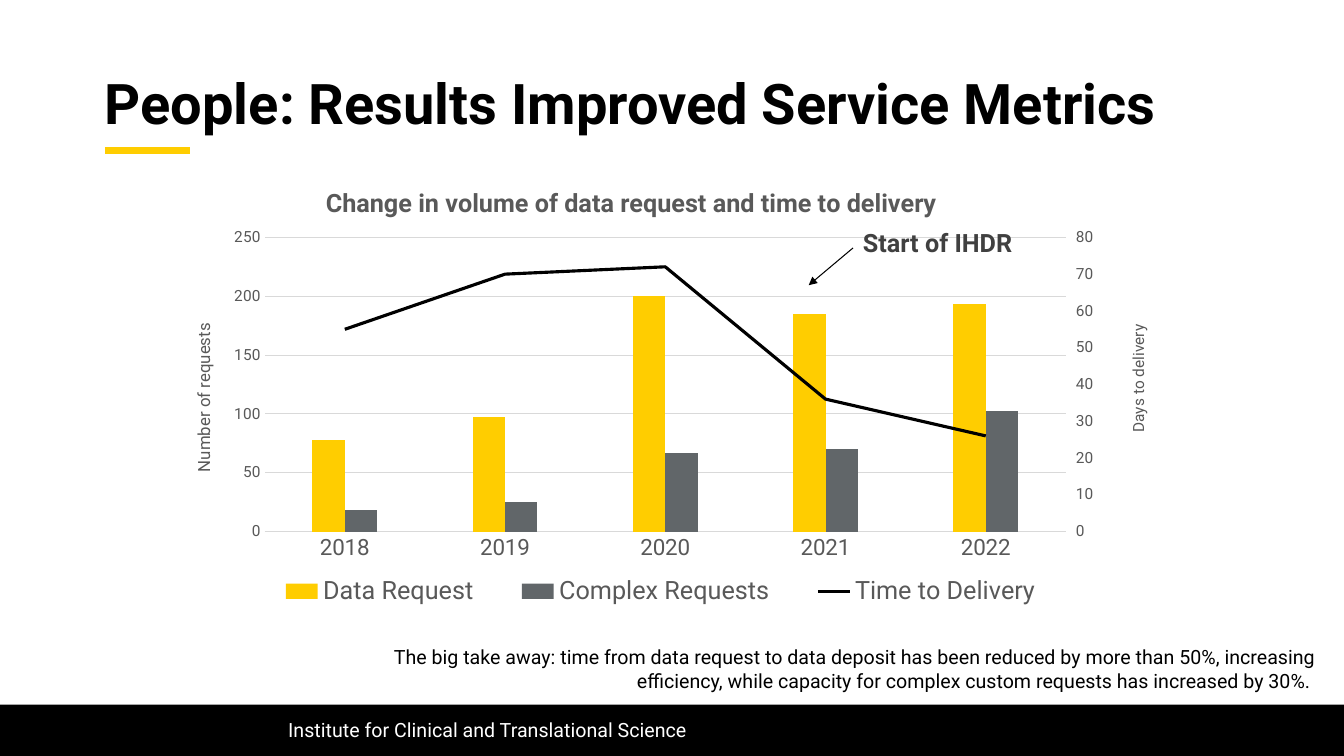
from dataclasses import dataclass

from lxml import etree
from pptx import Presentation
from pptx.chart.chart import Chart
from pptx.chart.data import CategoryChartData
from pptx.dml.color import RGBColor
from pptx.enum.chart import XL_CHART_TYPE, XL_LEGEND_POSITION, XL_MARKER_STYLE, XL_TICK_MARK
from pptx.enum.shapes import MSO_CONNECTOR, MSO_SHAPE
from pptx.enum.text import MSO_ANCHOR, PP_ALIGN
from pptx.oxml import parse_xml
from pptx.oxml.ns import nsdecls, qn
from pptx.shapes.base import BaseShape
from pptx.slide import Slide
from pptx.util import Inches, Pt

LEFT, CENTER, RIGHT = PP_ALIGN.LEFT, PP_ALIGN.CENTER, PP_ALIGN.RIGHT
TOP, MIDDLE = MSO_ANCHOR.TOP, MSO_ANCHOR.MIDDLE
NO_TICK = XL_TICK_MARK.NONE

BLACK = RGBColor(0x00, 0x00, 0x00)
WHITE = RGBColor(0xFF, 0xFF, 0xFF)
GOLD = RGBColor(0xFF, 0xCD, 0x00)
SLATE = RGBColor(0x61, 0x66, 0x69)
GRAY = RGBColor(0x59, 0x59, 0x59)
DARK_GRAY = RGBColor(0x40, 0x40, 0x40)
GRID_GRAY = RGBColor(0xD9, 0xD9, 0xD9)

FONT = "Roboto"
WIDTH, HEIGHT = Inches(13.33), Inches(7.5)
TITLE_ONLY_LAYOUT = 5


@dataclass(frozen=True)
class Box:
    """Place and size in percent of the slide."""
    left: float
    top: float
    width: float
    height: float

    def lengths(self) -> tuple[int, int, int, int]:
        return (across(self.left), down(self.top), across(self.width), down(self.height))


@dataclass(frozen=True)
class Label:
    text: str
    box: Box
    size: float
    color: RGBColor
    bold: bool = False
    alignment: PP_ALIGN = LEFT
    anchor: MSO_ANCHOR = TOP
    wrap: bool = True
    rotation: float = 0


@dataclass(frozen=True)
class Stroke:
    """A line between two points, in percent of the slide."""
    start: tuple[float, float]
    end: tuple[float, float]
    color: RGBColor
    width: float
    arrow: bool = False


TITLE = Label("People: Results Improved Service Metrics", Box(7.8, 7.73, 84.4, 12.67),
              40, BLACK, bold=True, anchor=MIDDLE)
LABELS = [
    Label("Institute for Clinical and Translational Science", Box(20.7, 93.87, 71.27, 5.33),
          14, WHITE, anchor=MIDDLE),
    Label("Start of IHDR", Box(63.47, 29.47, 13.2, 5.33), 18, DARK_GRAY, bold=True, wrap=False),
    Label("Days to delivery", Box(79.9, 48.13, 9.6, 3.87), 11, GRAY,
          alignment=CENTER, wrap=False, rotation=270),
    Label("The big take away: time from data request to data deposit has been reduced by more "
          "than 50%, increasing efficiency, while capacity for complex custom requests has "
          "increased by 30%. ", Box(23.86, 84.67, 74.79, 7.6), 14, BLACK, alignment=RIGHT),
]
STROKES = [
    Stroke((7.8, 19.87), (14.1, 19.87), GOLD, 5),
    Stroke((63.47, 32.8), (60.17, 37.73), BLACK, 0.75, arrow=True),
]
FOOTER_BAR = Box(0, 93.2, 100, 6.8)
CHART_BOX = Box(12.68, 21.07, 70.14, 60.8)
YEARS = ["2018", "2019", "2020", "2021", "2022"]
SERIES = {
    "Data Request": (78, 97, 200, 185, 193),
    "Complex Requests": (18, 25, 67, 70, 102),
    "Time to Delivery": (55, 70, 72, 36, 26),
}


def across(percent: float) -> int:
    return round(WIDTH * percent / 100)


def down(percent: float) -> int:
    return round(HEIGHT * percent / 100)


def set_values(target: object, values: dict[str, object]) -> None:
    for name, value in values.items():
        setattr(target, name, value)


def style_font(font: object, size: float, color: RGBColor, bold: bool = False) -> None:
    set_values(font, {"name": FONT, "size": Pt(size), "bold": bold})
    font.color.rgb = color


def write_label(shape: BaseShape, label: Label) -> None:
    shape.rotation = label.rotation
    frame = shape.text_frame
    set_values(frame, {"word_wrap": label.wrap, "vertical_anchor": label.anchor})
    paragraph = frame.paragraphs[0]
    paragraph.alignment = label.alignment
    run = paragraph.add_run()
    run.text = label.text
    style_font(run.font, label.size, label.color, label.bold)


def add_title(slide: Slide) -> None:
    shape = slide.shapes.title
    set_values(shape, dict(zip(("left", "top", "width", "height"), TITLE.box.lengths())))
    write_label(shape, TITLE)
    margins = ("margin_left", "margin_top", "margin_right", "margin_bottom")
    set_values(shape.text_frame, dict.fromkeys(margins, 0))
    shape.text_frame.paragraphs[0].line_spacing = 0.9


def add_stroke(slide: Slide, stroke: Stroke) -> None:
    (x1, y1), (x2, y2) = stroke.start, stroke.end
    connector = slide.shapes.add_connector(
        MSO_CONNECTOR.STRAIGHT, across(x1), down(y1), across(x2), down(y2))
    connector.line.color.rgb = stroke.color
    connector.line.width = Pt(stroke.width)
    properties = connector._element.spPr
    if stroke.arrow:
        etree.SubElement(properties.find(qn("a:ln")), qn("a:tailEnd"), type="triangle")
    etree.SubElement(properties, qn("a:effectLst"))


def place(element: etree._Element, index: int, inner: bool = False, **shares: float) -> None:
    """Fix a chart part at shares of the chart's size."""
    for layout in element.findall(qn("c:layout")):
        element.remove(layout)
    layout = etree.Element(qn("c:layout"))
    manual = etree.SubElement(layout, qn("c:manualLayout"))
    settings = {"layoutTarget": "inner"} if inner else {}
    settings |= {"xMode": "edge", "yMode": "edge"} | shares
    for name, value in settings.items():
        etree.SubElement(manual, qn(f"c:{name}"), val=str(value))
    element.insert(index, layout)


def move_to_right_axis(chart: Chart) -> None:
    """Turn the last column series into a line on a second value axis."""
    plot_area = chart._chartSpace.chart.plotArea
    bars = plot_area.find(qn("c:barChart"))
    series = bars.findall(qn("c:ser"))[-1]
    for setting in series.findall(qn("c:invertIfNegative")):
        series.remove(setting)
    line = parse_xml(
        f'<c:lineChart {nsdecls("c")}><c:grouping val="standard"/><c:varyColors val="0"/>'
        '<c:marker val="1"/><c:axId val="501"/><c:axId val="502"/></c:lineChart>')
    line.insert(2, series)
    bars.addnext(line)
    axes = parse_xml(
        f'<c:plotArea {nsdecls("c", "a")}><c:catAx><c:axId val="501"/>'
        '<c:scaling><c:orientation val="minMax"/></c:scaling><c:delete val="1"/>'
        '<c:axPos val="b"/><c:crossAx val="502"/></c:catAx>'
        '<c:valAx><c:axId val="502"/><c:scaling><c:orientation val="minMax"/>'
        '<c:max val="80"/><c:min val="0"/></c:scaling><c:delete val="0"/><c:axPos val="r"/>'
        '<c:numFmt formatCode="General" sourceLinked="0"/><c:majorTickMark val="out"/>'
        '<c:minorTickMark val="none"/><c:tickLblPos val="nextTo"/>'
        '<c:spPr><a:ln><a:noFill/></a:ln></c:spPr><c:txPr><a:bodyPr/><a:p><a:pPr>'
        f'<a:defRPr sz="1100" b="0"><a:solidFill><a:srgbClr val="{GRAY}"/></a:solidFill>'
        f'<a:latin typeface="{FONT}"/></a:defRPr></a:pPr></a:p></c:txPr>'
        '<c:crossAx val="501"/><c:crosses val="max"/><c:majorUnit val="10"/></c:valAx></c:plotArea>')
    last_axis = plot_area.find(qn("c:valAx"))
    for axis in reversed(list(axes)):
        last_axis.addnext(axis)


def write_chart_title(title: object, text: str, size: float, bold: bool, x: float, y: float) -> None:
    title.text_frame.text = text
    style_font(title.text_frame.paragraphs[0].runs[0].font, size, GRAY, bold)
    place(title._element, 1, x=x, y=y)


def add_metrics_chart(slide: Slide) -> None:
    data = CategoryChartData()
    data.categories = YEARS
    for name, values in SERIES.items():
        data.add_series(name, values)
    chart = slide.shapes.add_chart(XL_CHART_TYPE.COLUMN_CLUSTERED, *CHART_BOX.lengths(), data).chart
    style_font(chart.font, 10, BLACK)
    years, requests = chart.category_axis, chart.value_axis
    for axis, size in ((years, 16), (requests, 11)):
        set_values(axis, {"major_tick_mark": NO_TICK, "minor_tick_mark": NO_TICK})
        style_font(axis.tick_labels.font, size, GRAY)
    set_values(requests, {"minimum_scale": 0, "maximum_scale": 250, "major_unit": 50})
    requests.format.line.fill.background()
    for line in (years.format.line, requests.major_gridlines.format.line):
        line.color.rgb, line.width = GRID_GRAY, Pt(0.75)
    write_chart_title(chart.chart_title, "Change in volume of data request and time to delivery",
                      18, True, 0.16, 0.05)
    write_chart_title(requests.axis_title, "Number of requests", 12, False, 0.02, 0.35)
    chart.has_legend = True
    set_values(chart.legend, {"position": XL_LEGEND_POSITION.BOTTOM, "include_in_layout": False})
    style_font(chart.legend.font, 18, GRAY)
    place(chart.legend._element, 1, x=0.08, y=0.9, w=0.88, h=0.08)
    move_to_right_axis(chart)
    place(chart._chartSpace.chart.plotArea, 0, inner=True, x=0.1, y=0.17, w=0.85, h=0.64)
    columns, delivery = chart.plots
    set_values(columns, {"gap_width": 295, "overlap": 0, "vary_by_categories": False})
    for series, color in zip(columns.series, (GOLD, SLATE)):
        series.format.fill.solid()
        series.format.fill.fore_color.rgb = color
    days = delivery.series[0]
    days.smooth = False
    days.marker.style = XL_MARKER_STYLE.NONE
    days.format.line.width = Pt(2.25)
    days.format.line.color.rgb = BLACK


def main() -> None:
    presentation = Presentation()
    set_values(presentation, {"slide_width": WIDTH, "slide_height": HEIGHT})
    slide = presentation.slides.add_slide(presentation.slide_layouts[TITLE_ONLY_LAYOUT])
    footer = slide.shapes.add_shape(MSO_SHAPE.RECTANGLE, *FOOTER_BAR.lengths())
    footer.shadow.inherit = False
    footer.fill.solid()
    footer.fill.fore_color.rgb = BLACK
    footer.line.fill.background()
    add_title(slide)
    add_metrics_chart(slide)
    for stroke in STROKES:
        add_stroke(slide, stroke)
    for label in LABELS:
        write_label(slide.shapes.add_textbox(*label.box.lengths()), label)
    presentation.save("out.pptx")


if __name__ == "__main__":
    main()
